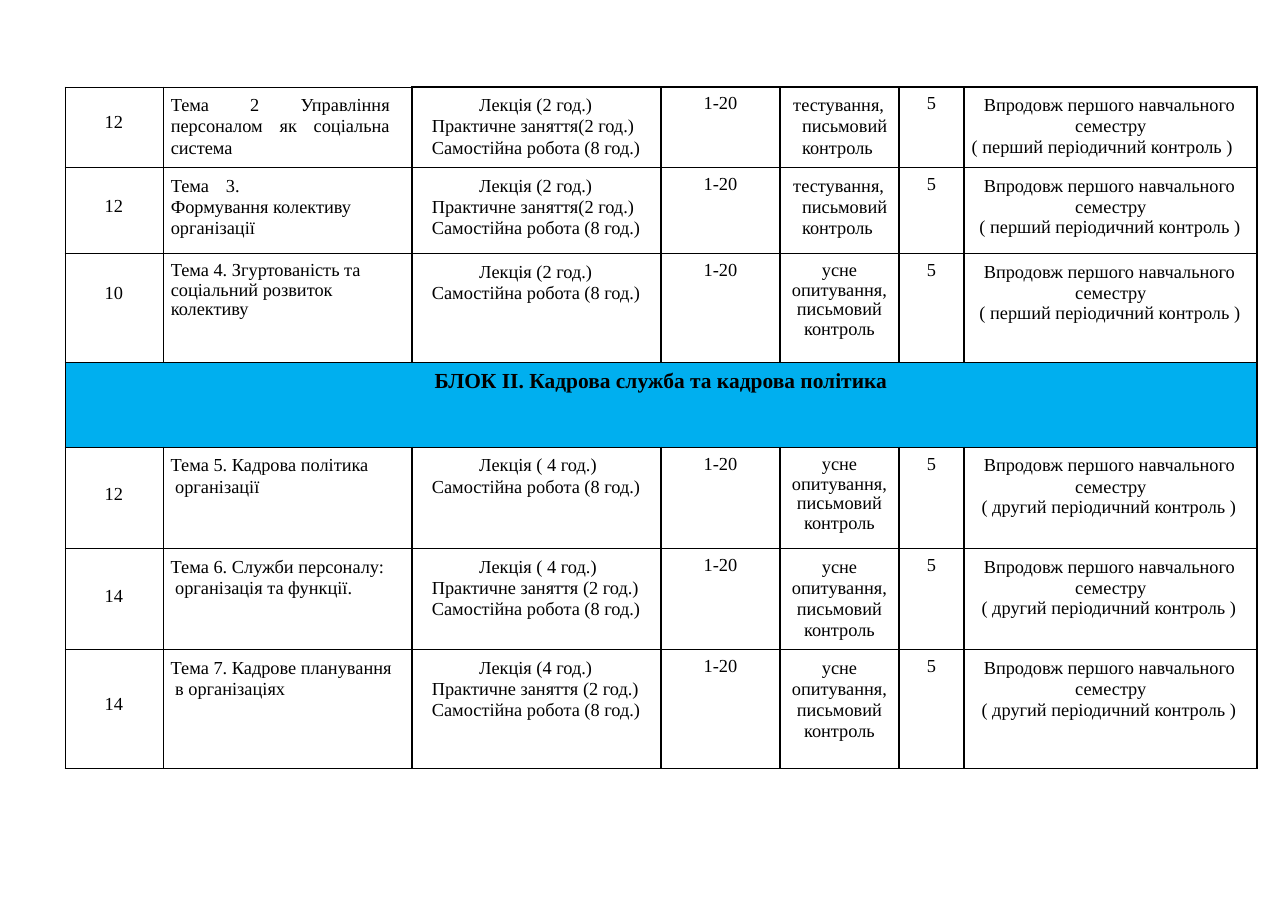
from copy import deepcopy

from lxml.etree import SubElement
from pptx import Presentation
from pptx.dml.color import RGBColor
from pptx.enum.text import PP_ALIGN
from pptx.oxml.ns import qn
from pptx.util import Inches, Pt

COLORS = {"text": "000000", "line": "000000", "block": "00AFEF"}
FONT = "Times New Roman"
COLUMNS = [0.89, 2.26, 2.26, 1.08, 1.08, 0.59, 2.66]
HEIGHTS = [0.73, 0.78, 0.99, 0.77, 0.92, 0.92, 1.08]
BLOCK_ROW = 3
BLOCK_TITLE = "БЛОК ІІ. Кадрова служба та кадрова політика"
EXACT, TIGHT = Pt(13.8), 0.96

LECTURE = "Лекція (2 год.)"
LONG_LECTURE = "Лекція ( 4 год.)"
PRACTICE = "Практичне заняття(2 год.)"
SPACED_PRACTICE = "Практичне заняття (2 год.)"
SELF_STUDY = "Самостійна робота (8 год.)"
TEST = "тестування,\vписьмовий\vконтроль"
ORAL = "усне\vопитування,\vписьмовий\vконтроль"
TERM = "Впродовж першого навчального\vсеместру"
FIRST = "( перший періодичний контроль )"
SECOND = "( другий періодичний контроль )"

TOPICS = {
    0: dict(hours="12", hours_top=0.23,
            theme="Тема 2 Управління персоналом як соціальна система",
            theme_format=dict(align=PP_ALIGN.JUSTIFY, right=0.2),
            work=[LECTURE, PRACTICE, SELF_STUDY],
            check=TEST, period=FIRST, period_left=0.07),
    1: dict(hours="12", hours_top=0.26,
            theme="Тема\t3.\vФормування колективу\vорганізації",
            theme_format=dict(tab=0.8),
            work=[LECTURE, PRACTICE, SELF_STUDY],
            check=TEST, period=FIRST, period_left=0.14),
    2: dict(hours="10", hours_top=0.27,
            theme="Тема 4. Згуртованість та\vсоціальний розвиток\vколективу",
            theme_format=dict(spacing=TIGHT),
            work=[LECTURE, SELF_STUDY],
            check=ORAL, check_spacing=TIGHT, period=FIRST, period_left=0.14),
    4: dict(hours="12", hours_top=0.34,
            theme="Тема 5. Кадрова політика\vорганізації",
            theme_format=dict(left=0.11, indent=-0.04),
            work=[LONG_LECTURE, SELF_STUDY],
            check=ORAL, check_spacing=TIGHT, period=SECOND, period_left=0.16),
    5: dict(hours="14", hours_top=0.34,
            theme="Тема 6. Служби персоналу:\vорганізація та функції.",
            theme_format=dict(left=0.11, indent=-0.04),
            work=[LONG_LECTURE, SPACED_PRACTICE, SELF_STUDY],
            check=ORAL, period=SECOND, period_left=0.16),
    6: dict(hours="14", hours_top=0.4,
            theme="Тема 7. Кадрове планування\vв організаціях",
            theme_format=dict(left=0.11, indent=-0.04),
            work=["Лекція (4 год.)", SPACED_PRACTICE, SELF_STUDY],
            check=ORAL, period=SECOND, period_left=0.16),
}


def write(p, text, size=12, bold=False, align=PP_ALIGN.LEFT, left=0,
          indent=0, spacing=None, tab=None):
    p.text = text
    p.alignment = align
    if spacing:
        p.line_spacing = spacing
    p_pr = p._p.get_or_add_pPr()
    p_pr.set("marL", str(Inches(left)))
    p_pr.set("indent", str(Inches(indent)))
    if tab:
        tabs = SubElement(p_pr, qn("a:tabLst"))
        SubElement(tabs, qn("a:tab"), pos=str(Inches(tab)), algn="l")
    for r in p.runs:
        r.font.name = FONT
        r.font.size = Pt(size)
        r.font.bold = bold
        r.font.color.rgb = RGBColor.from_string(COLORS["text"])
    for br in p._p.findall(qn("a:br")):
        br.insert(0, deepcopy(p.runs[0]._r.rPr))


def fill_cell(cell, text, top=0.07, right=0, **fmt):
    cell.margin_left = cell.margin_bottom = 0
    cell.margin_top, cell.margin_right = Inches(top), Inches(right)
    write(cell.text_frame.paragraphs[0], text, **fmt)


def border_width(row, col, side):
    if row == BLOCK_ROW:
        return 0.5 if side in "LT" else 1
    if row == BLOCK_ROW + 1 and side == "T":
        return 1
    thin = col == 0 or (col == 1 and side != "R")
    return 0.5 if thin or (row == BLOCK_ROW - 1 and side == "B") else 1


def style_cell(cell, row, col):
    tc_pr = cell._tc.get_or_add_tcPr()
    for side in "LRTB":
        width = Pt(border_width(row, col, side))
        ln = SubElement(tc_pr, qn(f"a:ln{side}"), w=str(width))
        solid = SubElement(ln, qn("a:solidFill"))
        SubElement(solid, qn("a:srgbClr"), val=COLORS["line"])
    if row == BLOCK_ROW:
        cell.fill.solid()
        cell.fill.fore_color.rgb = RGBColor.from_string(COLORS["block"])
    else:
        cell.fill.background()


def fill_topic(cells, topic):
    hours, theme, work, students, check, points, period = cells
    fill_cell(hours, topic["hours"], top=topic["hours_top"], left=0.36)
    fill_cell(theme, topic["theme"],
              **{"left": 0.07, "spacing": EXACT, **topic["theme_format"]})
    fill_cell(work, "\v".join(topic["work"]), left=0.18, indent=0.43,
              spacing=EXACT)
    fill_cell(students, "1-20", top=0.06, align=PP_ALIGN.CENTER)
    if topic["check"] == TEST:
        check_format = dict(left=0.2, indent=-0.08)
    else:
        check_format = dict(align=PP_ALIGN.CENTER)
    fill_cell(check, topic["check"],
              spacing=topic.get("check_spacing", EXACT), **check_format)
    fill_cell(points, "5", top=0.06, align=PP_ALIGN.CENTER)
    fill_cell(period, TERM, left=1.01, indent=-0.83, spacing=EXACT)
    write(period.text_frame.add_paragraph(), topic["period"],
          left=topic["period_left"], spacing=Pt(13.4))


def add_plan(s):
    table = s.shapes.add_table(
        len(HEIGHTS), len(COLUMNS), Inches(0.59), Inches(0.79),
        Inches(sum(COLUMNS)), Inches(sum(HEIGHTS))).table
    table.first_row = table.horz_banding = False
    for column, width in zip(table.columns, COLUMNS):
        column.width = Inches(width)
    for i, (row, height) in enumerate(zip(table.rows, HEIGHTS)):
        row.height = Inches(height)
        for j, cell in enumerate(row.cells):
            style_cell(cell, i, j)
        if i in TOPICS:
            fill_topic(row.cells, TOPICS[i])
    block = table.cell(BLOCK_ROW, 0)
    block.merge(table.cell(BLOCK_ROW, len(COLUMNS) - 1))
    fill_cell(block, BLOCK_TITLE, top=0.06, size=14, bold=True,
              align=PP_ALIGN.CENTER)


def main():
    prs = Presentation()
    prs.slide_width, prs.slide_height = Inches(11.69), Inches(8.27)
    s = prs.slides.add_slide(prs.slide_layouts[6])
    add_plan(s)
    prs.save("out.pptx")


if __name__ == "__main__":
    main()
